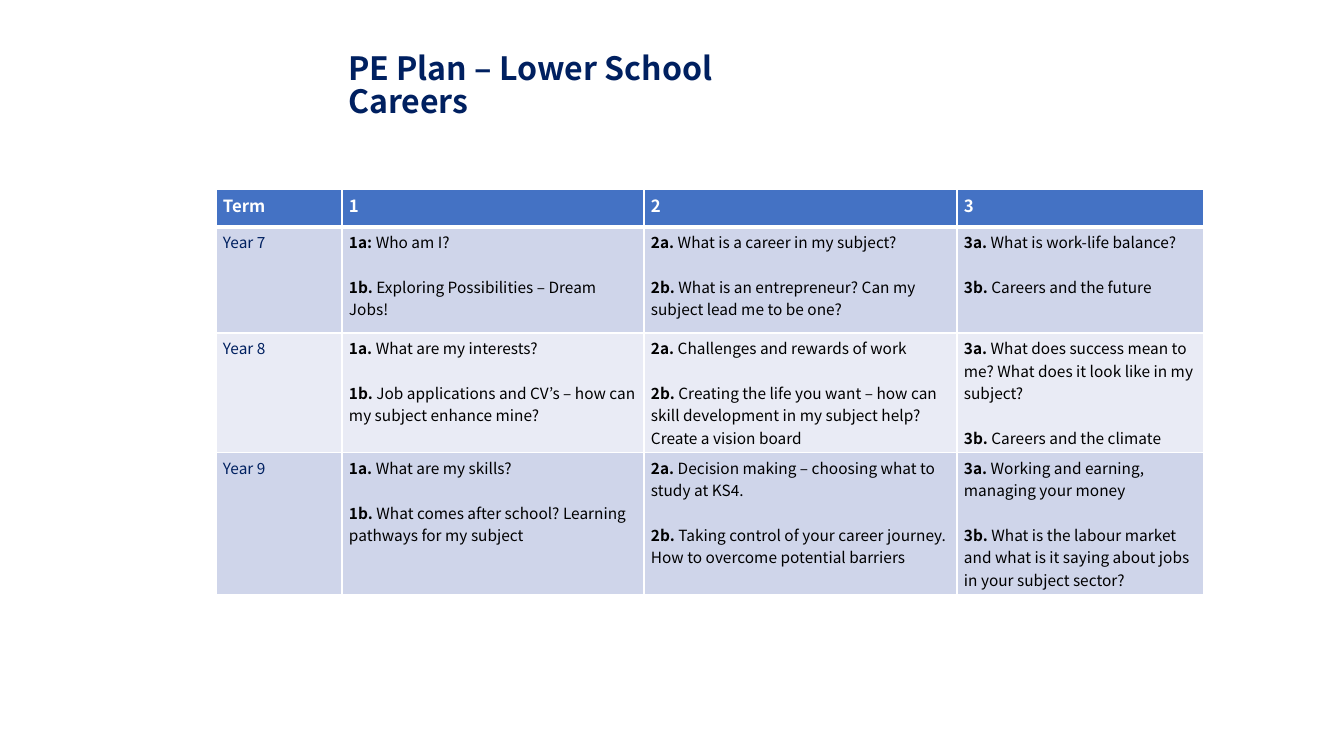
from dataclasses import dataclass

from lxml.etree import SubElement
from pptx import Presentation
from pptx.dml.color import RGBColor as Color
from pptx.enum.text import MSO_ANCHOR as Anchor, PP_ALIGN as Align
from pptx.oxml.ns import qn
from pptx.util import Emu, Pt


@dataclass(frozen=True)
class Theme:
    font: str = "Noto Sans CJK KR"
    navy: str = "002060"
    black: str = "000000"
    white: str = "FFFFFF"
    header_fill: str = "4472C4"
    band_fills: tuple = ("CFD5EA", "E9EBF5")
    title_size: float = 22.9
    header_size: int = 12
    body_size: int = 11
    title_spacing: float = 0.84
    question_gap: float = 15.9
    border: int = 1
    header_border: int = 3


THEME = Theme()
EMU_PER_PX = 914400 / 100.8

TITLE_LINES = ("PE Plan – Lower School", "Careers")
HEADINGS = ("Term", "1", "2", "3")
COLUMN_WIDTHS = (126, 302, 313, 247)
ROW_HEIGHTS = (38, 106, 118, 137)
YEARS = {
    "Year 7": (
        (("1a: ", "Who am I?"),
         ("1b. ", "Exploring Possibilities – Dream Jobs!")),
        (("2a. ", "What is a career in my subject?"),
         ("2b. ", "What is an entrepreneur? Can my subject lead me to be one?")),
        (("3a. ", "What is work-life balance?"),
         ("3b. ", "Careers and the future")),
    ),
    "Year 8": (
        (("1a. ", "What are my interests?"),
         ("1b. ", "Job applications and CV’s – how can my subject enhance mine?")),
        (("2a. ", "Challenges and rewards of work"),
         ("2b. ", "Creating the life you want – how can skill development in my "
                  "subject help? Create a vision board")),
        (("3a. ", "What does success mean to me? What does it look like in my subject?"),
         ("3b. ", "Careers and the climate")),
    ),
    "Year 9": (
        (("1a. ", "What are my skills?"),
         ("1b. ", "What comes after school? Learning pathways for my subject")),
        (("2a. ", "Decision making – choosing what to study at KS4."),
         ("2b. ", "Taking control of your career journey. How to overcome "
                  "potential barriers")),
        (("3a. ", "Working and earning, managing your money"),
         ("3b. ", "What is the labour market and what is it saying about jobs "
                  "in your subject sector?")),
    ),
}


def px(length):
    return Emu(round(length * EMU_PER_PX))


def set_font(font, size, color, bold=None):
    font.name = THEME.font
    font.size = Pt(size)
    font.color.rgb = Color.from_string(color)
    font.bold = bold


def add_title(slide, left, top, width, height):
    title = slide.shapes.title
    title.left, title.top, title.width, title.height = map(px, (left, top, width, height))
    frame = title.text_frame
    frame.word_wrap = True
    frame.vertical_anchor = Anchor.TOP
    frame.text = "\n".join(TITLE_LINES)
    for paragraph in frame.paragraphs:
        paragraph.alignment = Align.LEFT
        paragraph.line_spacing = THEME.title_spacing
        paragraph.space_before = Pt(0)
        set_font(paragraph.font, THEME.title_size, THEME.navy, True)


def set_borders(cell, top, bottom):
    properties = cell._tc.get_or_add_tcPr()
    widths = {"L": THEME.border, "R": THEME.border, "T": top, "B": bottom}
    for index, (side, width) in enumerate(widths.items()):
        line = SubElement(properties, qn(f"a:ln{side}"), w=str(Pt(width)))
        fill = SubElement(line, qn("a:solidFill"))
        SubElement(fill, qn("a:srgbClr"), val=THEME.white)
        properties.insert(index, line)


def style_cell(cell, fill, top=THEME.border, bottom=THEME.border):
    cell.fill.solid()
    cell.fill.fore_color.rgb = Color.from_string(fill)
    cell.margin_left = cell.margin_right = px(7)
    cell.margin_top = cell.margin_bottom = px(4)
    set_borders(cell, top, bottom)


def write_label(cell, text, size, color, bold):
    cell.text = text
    set_font(cell.text_frame.paragraphs[0].font, size, color, bold)


def write_questions(cell, questions):
    frame = cell.text_frame
    for index, (code, question) in enumerate(questions):
        paragraph = frame.add_paragraph() if index else frame.paragraphs[0]
        if index:
            paragraph.space_before = Pt(THEME.question_gap)
        for text, bold in ((code, True), (question, False)):
            run = paragraph.add_run()
            run.text = text
            set_font(run.font, THEME.body_size, THEME.black, bold)


def add_plan_table(slide, left, top):
    size = (sum(COLUMN_WIDTHS), sum(ROW_HEIGHTS))
    table = slide.shapes.add_table(
        len(ROW_HEIGHTS), len(COLUMN_WIDTHS), *map(px, (left, top, *size))).table
    for column, width in zip(table.columns, COLUMN_WIDTHS):
        column.width = px(width)
    for row, height in zip(table.rows, ROW_HEIGHTS):
        row.height = px(height)
    for column, heading in enumerate(HEADINGS):
        cell = table.cell(0, column)
        style_cell(cell, THEME.header_fill, bottom=THEME.header_border)
        write_label(cell, heading, THEME.header_size, THEME.white, True)
    for row, (year, terms) in enumerate(YEARS.items(), start=1):
        top_border = THEME.header_border if row == 1 else THEME.border
        for column in range(len(HEADINGS)):
            style_cell(table.cell(row, column), THEME.band_fills[(row - 1) % 2], top_border)
        write_label(table.cell(row, 0), year, THEME.body_size, THEME.navy, False)
        for column, questions in enumerate(terms, start=1):
            write_questions(table.cell(row, column), questions)


def main():
    presentation = Presentation()
    presentation.slide_width, presentation.slide_height = px(1344), px(756)
    slide = presentation.slides.add_slide(presentation.slide_layouts[5])
    add_title(slide, 338, 50, 712, 88)
    add_plan_table(slide, 216, 189)
    presentation.save("out.pptx")


if __name__ == "__main__":
    main()
